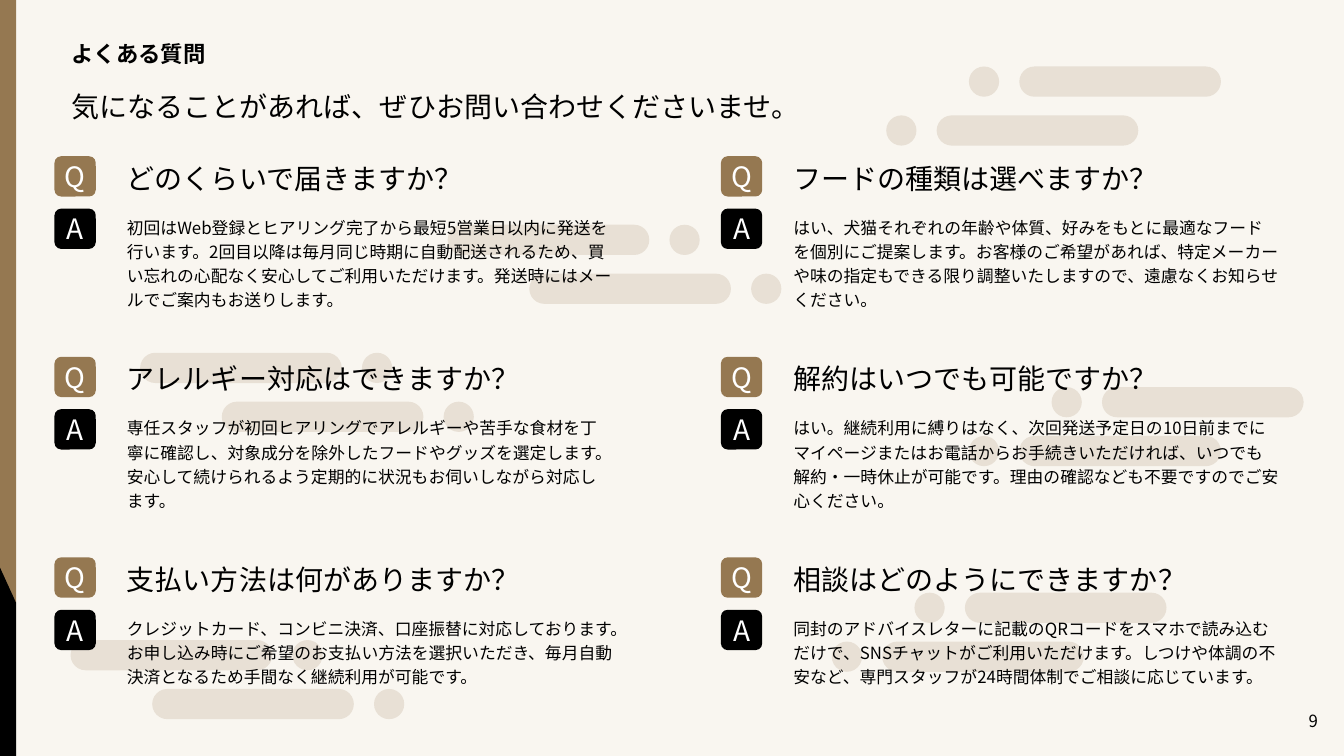
from dataclasses import dataclass

from lxml import etree
from pptx import Presentation
from pptx.dml.color import RGBColor
from pptx.enum.shapes import MSO_SHAPE
from pptx.enum.text import MSO_ANCHOR, PP_ALIGN
from pptx.oxml.ns import qn
from pptx.shapes.autoshape import Shape
from pptx.util import Inches, Pt

RECTANGLE = MSO_SHAPE.RECTANGLE
ROUNDED = MSO_SHAPE.ROUNDED_RECTANGLE
OVAL = MSO_SHAPE.OVAL
TRIANGLE = MSO_SHAPE.RIGHT_TRIANGLE
LEFT, CENTER, RIGHT = PP_ALIGN.LEFT, PP_ALIGN.CENTER, PP_ALIGN.RIGHT
TOP, MIDDLE = MSO_ANCHOR.TOP, MSO_ANCHOR.MIDDLE

FONT = "Noto Sans CJK JP"
BLACK, WHITE = "000000", "FFFFFF"
CREAM, BROWN, BEIGE = "F9F6F0", "957851", "E8E0D5"

COLUMN_LEFTS = (0.54, 7.15)
FIRST_ROW_TOP, ROW_STEP = 1.55, 1.99
ANSWER_OFFSET, TEXT_OFFSET = 0.52, 0.62
BAR_WIDTH, DOT_SIZE = 2.0, 0.3


@dataclass(frozen=True)
class Box:
    left: float
    top: float
    width: float
    height: float


@dataclass(frozen=True)
class Faq:
    question: str
    answer: str


@dataclass(frozen=True)
class PawBars:
    """Two bars, each with a dot to its right or left; the lower pair is shifted."""
    left: float
    top: float
    dot_on_right: bool


FAQ_COLUMNS = (
    (
        Faq("どのくらいで届きますか？",
            "初回はWeb登録とヒアリング完了から最短5営業日以内に発送を行います。"
            "2回目以降は毎月同じ時期に自動配送されるため、買い忘れの心配なく安心してご利用いただけます。"
            "発送時にはメールでご案内もお送りします。"),
        Faq("アレルギー対応はできますか？",
            "専任スタッフが初回ヒアリングでアレルギーや苦手な食材を丁寧に確認し、"
            "対象成分を除外したフードやグッズを選定します。"
            "安心して続けられるよう定期的に状況もお伺いしながら対応します。"),
        Faq("支払い方法は何がありますか？",
            "クレジットカード、コンビニ決済、口座振替に対応しております。"
            "お申し込み時にご希望のお支払い方法を選択いただき、"
            "毎月自動決済となるため手間なく継続利用が可能です。"),
    ),
    (
        Faq("フードの種類は選べますか？",
            "はい、犬猫それぞれの年齢や体質、好みをもとに最適なフードを個別にご提案します。"
            "お客様のご希望があれば、特定メーカーや味の指定もできる限り調整いたしますので、"
            "遠慮なくお知らせください。"),
        Faq("解約はいつでも可能ですか？",
            "はい。継続利用に縛りはなく、次回発送予定日の10日前までに"
            "マイページまたはお電話からお手続きいただければ、いつでも解約・一時休止が可能です。"
            "理由の確認なども不要ですのでご安心ください。"),
        Faq("相談はどのようにできますか？",
            "同封のアドバイスレターに記載のQRコードをスマホで読み込むだけで、"
            "SNSチャットがご利用いただけます。"
            "しつけや体調の不安など、専門スタッフが24時間体制でご相談に応じています。"),
    ),
)

PAW_BARS = (
    PawBars(4.44, 2.23, True),
    PawBars(0.7, 6.35, True),
    PawBars(10.43, 3.84, False),
    PawBars(9.07, 5.88, False),
    PawBars(9.61, 0.66, False),
    PawBars(1.39, 3.5, True),
)


def rgb(color: str) -> RGBColor:
    return RGBColor.from_string(color)


def write(shape: Shape, text: str, size: float, color: str = BLACK, bold: bool = False,
          align: PP_ALIGN = LEFT, anchor: MSO_ANCHOR = TOP, spacing: float = 1.0) -> None:
    frame = shape.text_frame
    frame.word_wrap = True
    frame.vertical_anchor = anchor
    paragraph = frame.paragraphs[0]
    paragraph.alignment = align
    paragraph.line_spacing = spacing
    run = paragraph.add_run()
    run.text = text
    font = run.font
    font.size, font.bold, font.name = Pt(size), bold, FONT
    font.color.rgb = rgb(color)
    east_asian = etree.Element(qn("a:ea"), typeface=FONT)
    run._r.get_or_add_rPr().find(qn("a:latin")).addnext(east_asian)


def add_text(slide, box: Box, text: str, size: float, **style) -> None:
    shape = slide.shapes.add_textbox(Inches(box.left), Inches(box.top),
                                     Inches(box.width), Inches(box.height))
    write(shape, text, size, **style)


def add_filled(slide, kind: MSO_SHAPE, box: Box, color: str) -> Shape:
    shape = slide.shapes.add_shape(kind, Inches(box.left), Inches(box.top),
                                   Inches(box.width), Inches(box.height))
    shape.shadow.inherit = False
    shape.fill.solid()
    shape.fill.fore_color.rgb = rgb(color)
    shape.line.fill.background()
    return shape


def add_paw_bars(slide, bars: PawBars) -> None:
    bar_offset, dot_offset = (0, 2.2) if bars.dot_on_right else (0.5, 0)
    shift = 0.81 if bars.dot_on_right else -0.82
    for index in range(2):
        left, top = bars.left + index * shift, bars.top + index * 0.485
        add_filled(slide, OVAL, Box(left + dot_offset, top, DOT_SIZE, DOT_SIZE), BEIGE)
        bar = add_filled(slide, ROUNDED, Box(left + bar_offset, top, BAR_WIDTH, DOT_SIZE), BEIGE)
        bar.adjustments[0] = 0.5


def add_badge(slide, left: float, top: float, letter: str, color: str) -> None:
    badge = add_filled(slide, ROUNDED, Box(left, top, 0.41, 0.4), color)
    frame = badge.text_frame
    frame.margin_left = frame.margin_right = frame.margin_top = frame.margin_bottom = 0
    write(badge, letter, 20, color=WHITE, align=CENTER, anchor=MIDDLE)


def add_faq(slide, left: float, top: float, faq: Faq) -> None:
    text_left, answer_top = left + TEXT_OFFSET, top + ANSWER_OFFSET
    add_text(slide, Box(text_left, top, 5.02, 0.41), faq.question, 20)
    add_badge(slide, left, top, "Q", BROWN)
    add_text(slide, Box(text_left, answer_top, 5.02, 1.24), faq.answer, 12, spacing=1.2)
    add_badge(slide, left, answer_top, "A", BLACK)


def main() -> None:
    presentation = Presentation()
    presentation.slide_width, presentation.slide_height = Inches(13.33), Inches(7.5)
    slide = presentation.slides.add_slide(presentation.slide_layouts[6])

    add_filled(slide, RECTANGLE, Box(0, 0, 13.33, 7.5), CREAM)
    add_text(slide, Box(0.61, 0.26, 12.11, 0.54), "よくある質問", 16, bold=True, anchor=MIDDLE)
    add_text(slide, Box(0.61, 0.78, 12.11, 0.54),
             "気になることがあれば、ぜひお問い合わせくださいませ。", 20, anchor=MIDDLE)
    add_filled(slide, RECTANGLE, Box(0, 0, 0.16, 5.98), BROWN)
    add_filled(slide, RECTANGLE, Box(0, 5.98, 0.16, 1.52), BLACK)
    add_filled(slide, TRIANGLE, Box(0, 5.63, 0.16, 0.35), BLACK)
    add_text(slide, Box(12.68, 6.95, 0.49, 0.4), "9", 12, align=RIGHT, anchor=MIDDLE)

    for bars in PAW_BARS:
        add_paw_bars(slide, bars)
    for left, faqs in zip(COLUMN_LEFTS, FAQ_COLUMNS):
        for row, faq in enumerate(faqs):
            add_faq(slide, left, FIRST_ROW_TOP + row * ROW_STEP, faq)

    presentation.save("out.pptx")


if __name__ == "__main__":
    main()
